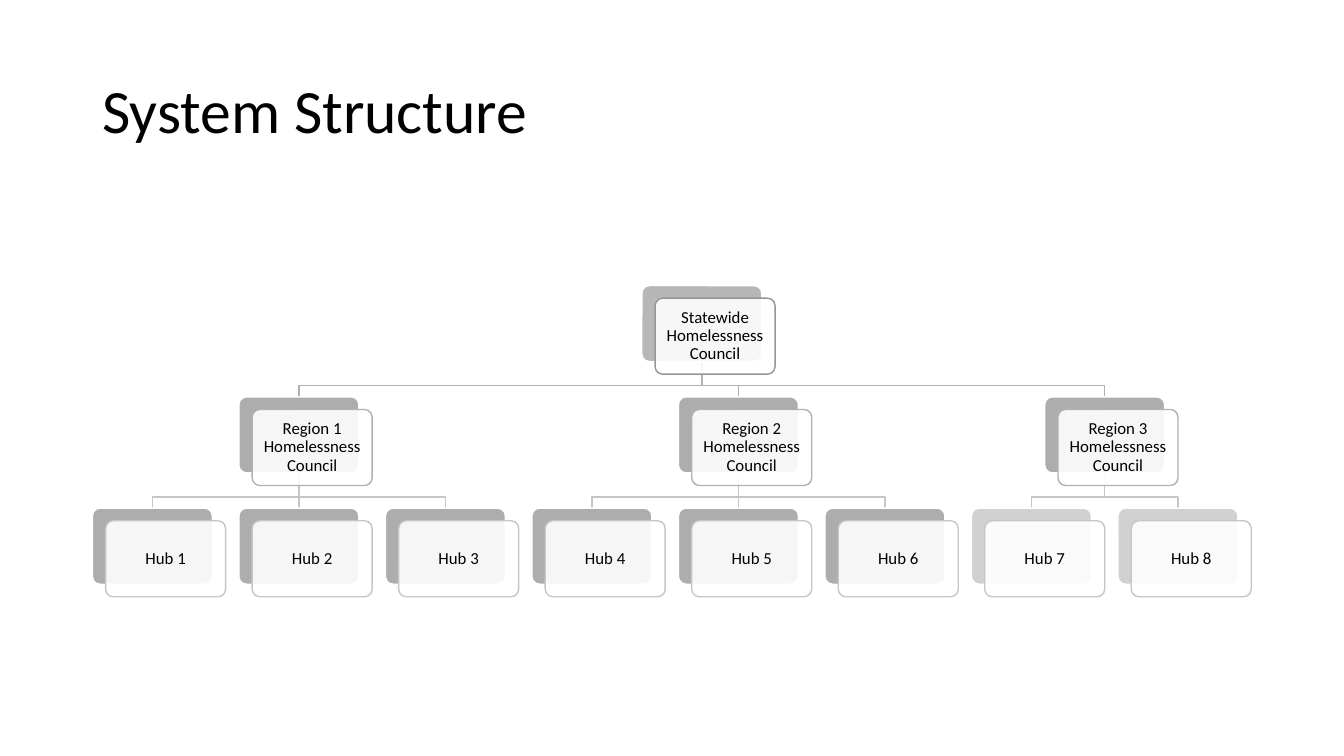
from pptx import Presentation
from pptx.dml.color import RGBColor
from pptx.enum.shapes import MSO_CONNECTOR, MSO_SHAPE
from pptx.enum.text import MSO_ANCHOR, PP_ALIGN
from pptx.oxml.ns import qn
from pptx.util import Pt
from lxml.etree import SubElement

BLACK = RGBColor(0x00, 0x00, 0x00)
WHITE = RGBColor(0xFF, 0xFF, 0xFF)
GREY = RGBColor(0xA5, 0xA5, 0xA5)
# Card outlines from the top level down; a connector takes its child's colour
LEVEL_LINES = [RGBColor(0x96, 0x96, 0x96), RGBColor(0xB1, 0xB1, 0xB1),
               RGBColor(0xC6, 0xC6, 0xC6)]

FONT = "Calibri"
COL_STEP, ROW_STEP = 104.65, 79.5
BOX_W, BOX_H = 85.7, 54.3
CARD_DX, CARD_DY = 9.5, 9
ELBOW_DROP = 17.2

# Region name, its hubs, opacity of the hubs' backing plates
REGIONS = [
    ("Region 1", ["Hub 1", "Hub 2", "Hub 3"], 90),
    ("Region 2", ["Hub 4", "Hub 5", "Hub 6"], 90),
    ("Region 3", ["Hub 7", "Hub 8"], 50),
]


def write(tf, text, size, align):
    tf.word_wrap = True
    tf.vertical_anchor = MSO_ANCHOR.MIDDLE
    p = tf.paragraphs[0]
    p.alignment = align
    p.line_spacing = 0.9
    r = p.add_run()
    r.text = text
    r.font.name = FONT
    r.font.size = Pt(size)
    r.font.color.rgb = BLACK


def add_title(s, x, y, w, h):
    tf = s.shapes.add_textbox(Pt(x), Pt(y), Pt(w), Pt(h)).text_frame
    write(tf, "System Structure", 44, PP_ALIGN.LEFT)


def add_plate(s, x, y, fill, opacity, line):
    """Add one translucent rounded rectangle."""
    sp = s.shapes.add_shape(MSO_SHAPE.ROUNDED_RECTANGLE,
                            Pt(x), Pt(y), Pt(BOX_W), Pt(BOX_H))
    sp.adjustments[0] = 0.1
    sp.shadow.inherit = False
    sp.fill.solid()
    sp.fill.fore_color.rgb = fill
    color = sp.fill._xPr.find(qn("a:solidFill"))[0]
    SubElement(color, qn("a:alpha")).set("val", str(opacity * 1000))
    sp.line.color.rgb = line
    sp.line.width = Pt(1)
    return sp


def add_node(s, x, y, text, level, opacity):
    """Add a grey backing plate with the labelled card offset over it."""
    add_plate(s, x, y, GREY, opacity, WHITE)
    card = add_plate(s, x + CARD_DX, y + CARD_DY, WHITE, 90, LEVEL_LINES[level])
    tf = card.text_frame
    tf.margin_left = tf.margin_right = Pt(3.6)
    tf.margin_top = tf.margin_bottom = Pt(3.6)
    write(tf, text, 12, PP_ALIGN.CENTER)


def add_branch(s, parent, child, color):
    """Join the bottom of one backing plate to the top of another."""
    x1, y1 = parent[0] + BOX_W / 2, parent[1] + BOX_H
    x2, y2 = child[0] + BOX_W / 2, child[1]
    if x1 == x2:
        sp = s.shapes.add_connector(MSO_CONNECTOR.STRAIGHT,
                                    Pt(x1), Pt(y1), Pt(x2), Pt(y2))
    else:
        bend = y1 + ELBOW_DROP
        path = s.shapes.build_freeform(Pt(x1), Pt(y1))
        path.add_line_segments([(Pt(x1), Pt(bend)), (Pt(x2), Pt(bend)),
                                (Pt(x2), Pt(y2))], close=False)
        sp = path.convert_to_shape()
        sp.fill.background()
    sp.line.color.rgb = color
    sp.line.width = Pt(1)
    SubElement(sp._element.spPr, qn("a:effectLst"))


def add_hierarchy(s, x, y):
    """Draw the tree with its top left corner at x, y; parents sit centred."""
    def place(col, level):
        return x + col * COL_STEP, y + level * ROW_STEP

    nodes, branches, regions = [], [], []
    first = 0
    for name, hubs, opacity in REGIONS:
        region = place(first + (len(hubs) - 1) / 2, 1)
        regions.append(region)
        nodes.append((region, f"{name} Homelessness Council", 1, 90))
        for col, hub in enumerate(hubs, first):
            nodes.append((place(col, 2), hub, 2, opacity))
            branches.append((region, place(col, 2), LEVEL_LINES[2]))
        first += len(hubs)

    root = ((regions[0][0] + regions[-1][0]) / 2, y)
    nodes.insert(0, (root, "Statewide Homelessness Council", 0, 80))
    branches += [(root, region, LEVEL_LINES[1]) for region in regions]

    for parent, child, color in branches:
        add_branch(s, parent, child, color)
    for (left, top), text, level, opacity in nodes:
        add_node(s, left, top, text, level, opacity)


def main():
    prs = Presentation()
    prs.slide_width, prs.slide_height = Pt(960), Pt(540)
    s = prs.slides.add_slide(prs.slide_layouts[6])
    add_title(s, 66, 28.75, 828, 104.4)
    add_hierarchy(s, 66, 204)
    prs.save("out.pptx")


if __name__ == "__main__":
    main()
